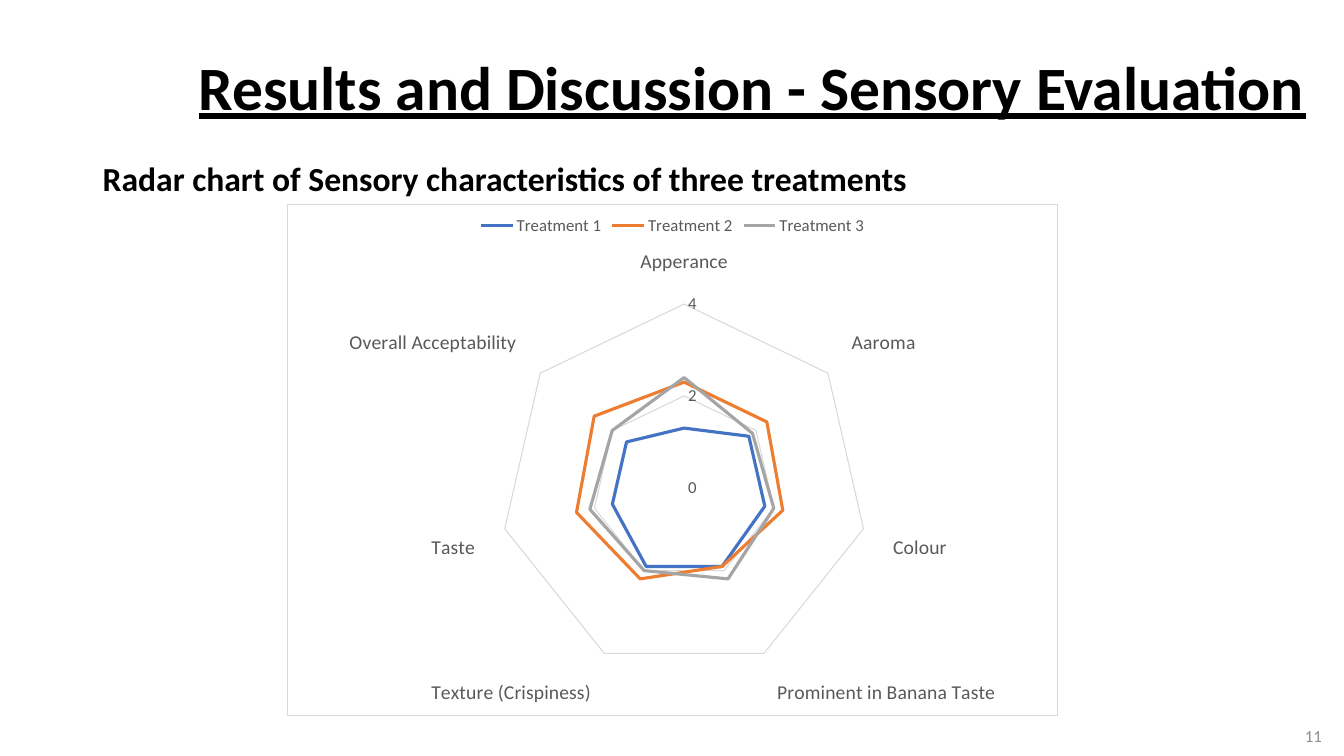
from dataclasses import dataclass

import lxml.etree
import pptx
import pptx.chart.data
import pptx.dml.color
import pptx.enum.chart
import pptx.enum.text
import pptx.util

PX = 9144  # EMU in one px, at 100 px to the inch
FONT = "Calibri"
BLACK, WHITE, TEXT_GREY, LINE_GREY, NUMBER_GREY = (
    "000000", "FFFFFF", "595959", "D9D9D9", "8C8C8C")
HAIRLINE = 0.75
ALIGN = pptx.enum.text.PP_ALIGN


@dataclass(frozen=True)
class Area:
    left: int
    top: int
    width: int
    height: int

    def emu(self) -> tuple[int, ...]:
        return tuple(n * PX for n in (self.left, self.top, self.width, self.height))


@dataclass(frozen=True)
class Treatment:
    name: str
    color: str
    scores: tuple[float, ...]


CHARACTERISTICS = (
    "Apperance", "Aaroma", "Colour", "Prominent in Banana Taste",
    "Texture (Crispiness)", "Taste", "Overall Acceptability")
TREATMENTS = (
    Treatment("Treatment 1", "4472C4", (1.3, 1.8, 1.8, 1.9, 1.9, 1.6, 1.6)),
    Treatment("Treatment 2", "ED7D31", (2.3, 2.3, 2.2, 1.9, 2.2, 2.4, 2.5)),
    Treatment("Treatment 3", "A5A5A5", (2.4, 1.9, 2.0, 2.2, 2.0, 2.1, 2.0)),
)


def rgb(color: str) -> pptx.dml.color.RGBColor:
    return pptx.dml.color.RGBColor.from_string(color)


def set_font(font, size: int, color: str, bold: bool = False, underline: bool = False) -> None:
    font.name = FONT
    font.size = pptx.util.Pt(size)
    font.bold = bold
    font.underline = underline
    font.color.rgb = rgb(color)


def set_line(line, color: str, width: float) -> None:
    line.color.rgb = rgb(color)
    line.width = pptx.util.Pt(width)


def write(box, text: str, *, size: int, color: str = BLACK, bold: bool = False,
          underline: bool = False, align=ALIGN.LEFT, spacing: float = 1.0, after: int = 0,
          anchor=pptx.enum.text.MSO_ANCHOR.MIDDLE) -> None:
    frame = box.text_frame
    frame.word_wrap = True
    frame.vertical_anchor = anchor
    para = frame.paragraphs[0]
    para.alignment = align
    para.line_spacing = spacing
    para.space_after = pptx.util.Pt(after)
    span = para.add_run()
    span.text = text
    set_font(span.font, size, color, bold, underline)


def frame_chart(chart) -> None:
    """Give the whole chart area a white fill and a square grey border."""
    c = "http://schemas.openxmlformats.org/drawingml/2006/chart"
    a = "http://schemas.openxmlformats.org/drawingml/2006/main"
    space = chart._chartSpace
    plot_part = space.find(f"{{{c}}}chart")
    for corners in space.findall(f"{{{c}}}roundedCorners"):
        space.remove(corners)
    plot_part.addprevious(lxml.etree.fromstring(f'<c:roundedCorners xmlns:c="{c}" val="0"/>'))
    plot_part.addnext(lxml.etree.fromstring(
        f'<c:spPr xmlns:c="{c}" xmlns:a="{a}">'
        f'<a:solidFill><a:srgbClr val="{WHITE}"/></a:solidFill>'
        f'<a:ln w="{pptx.util.Pt(HAIRLINE)}"><a:solidFill>'
        f'<a:srgbClr val="{LINE_GREY}"/></a:solidFill></a:ln></c:spPr>'))


def format_axes(chart) -> None:
    no_tick = pptx.enum.chart.XL_TICK_MARK.NONE
    category, value = chart.category_axis, chart.value_axis
    for axis, size in ((category, 14), (value, 12)):
        axis.major_tick_mark = axis.minor_tick_mark = no_tick
        set_font(axis.tick_labels.font, size, TEXT_GREY)
    category.has_major_gridlines = False
    set_line(category.format.line, LINE_GREY, HAIRLINE)
    value.minimum_scale, value.maximum_scale, value.major_unit = 0, 4, 2
    value.tick_labels.number_format = "General"
    value.tick_labels.number_format_is_linked = False
    value.format.line.fill.background()
    value.has_major_gridlines = True
    set_line(value.major_gridlines.format.line, LINE_GREY, HAIRLINE)


def add_radar(page, area: Area) -> None:
    data = pptx.chart.data.CategoryChartData()
    data.categories = CHARACTERISTICS
    for treatment in TREATMENTS:
        data.add_series(treatment.name, treatment.scores)
    chart = page.shapes.add_chart(
        pptx.enum.chart.XL_CHART_TYPE.RADAR, *area.emu(), data).chart
    set_font(chart.font, 10, BLACK)
    chart.has_title = False
    chart.has_legend = True
    chart.legend.position = pptx.enum.chart.XL_LEGEND_POSITION.TOP
    chart.legend.include_in_layout = False
    set_font(chart.legend.font, 12, TEXT_GREY)
    chart.plots[0].vary_by_categories = False
    for series, treatment in zip(chart.plots[0].series, TREATMENTS):
        series.smooth = False
        series.marker.style = pptx.enum.chart.XL_MARKER_STYLE.NONE
        set_line(series.format.line, treatment.color, 2.25)
    format_axes(chart)
    frame_chart(chart)


def add_text(page, area: Area, text: str, **style):
    box = page.shapes.add_textbox(*area.emu())
    write(box, text, **style)
    return box


def main() -> None:
    deck = pptx.Presentation()
    deck.slide_width, deck.slide_height = 1333 * PX, 750 * PX
    page = deck.slides.add_slide(deck.slide_layouts.get_by_name("Title Only"))

    title = page.shapes.title
    title.left, title.top, title.width, title.height = Area(171, 17, 1150, 145).emu()
    write(title, "Results and Discussion - Sensory Evaluation", size=44, bold=True,
          underline=True, align=ALIGN.CENTER, spacing=0.9)

    caption = add_text(
        page, Area(92, 149, 821, 50), "Radar chart of Sensory characteristics of three treatments",
        size=24, bold=True, spacing=1.07, after=8, anchor=pptx.enum.text.MSO_ANCHOR.TOP)
    caption.fill.solid()
    caption.fill.fore_color.rgb = rgb(WHITE)

    add_radar(page, Area(285, 202, 764, 508))
    add_text(page, Area(1021, 710, 300, 40), "11", size=12, color=NUMBER_GREY,
             align=ALIGN.RIGHT)
    deck.save("out.pptx")


if __name__ == "__main__":
    main()
